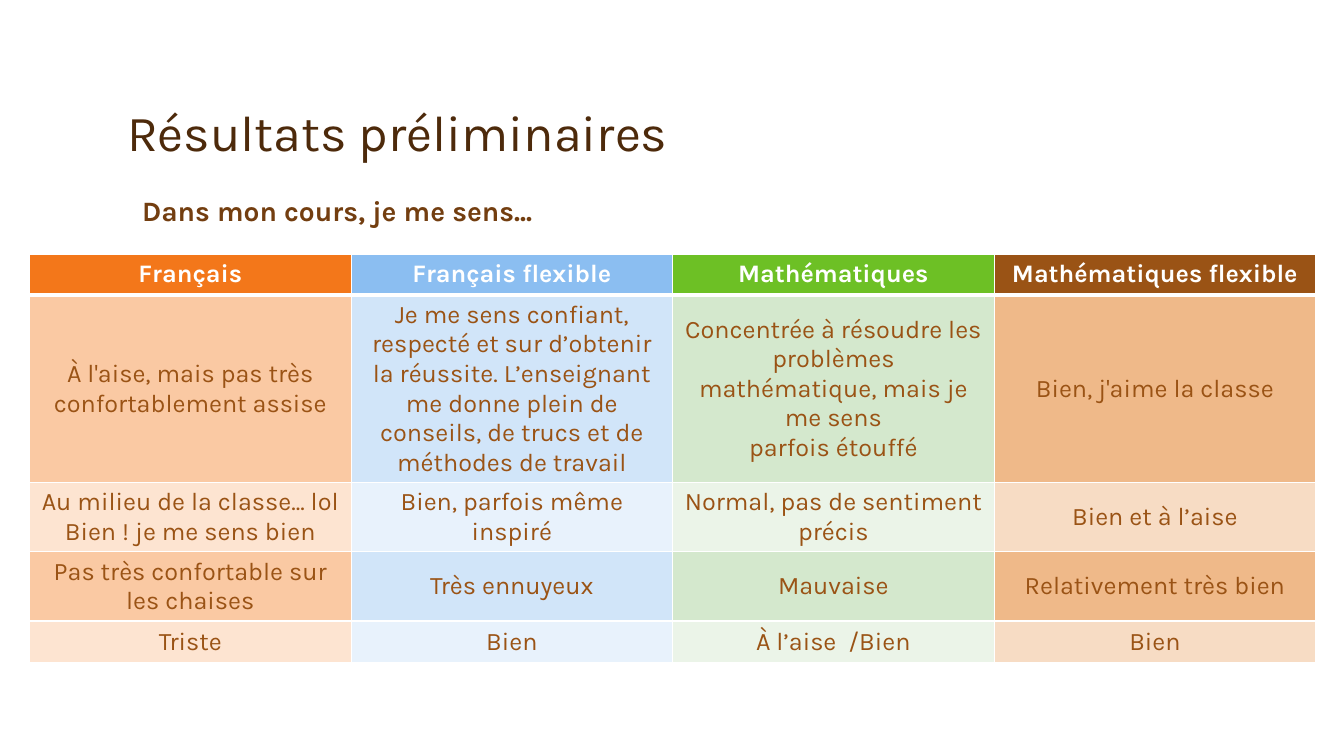
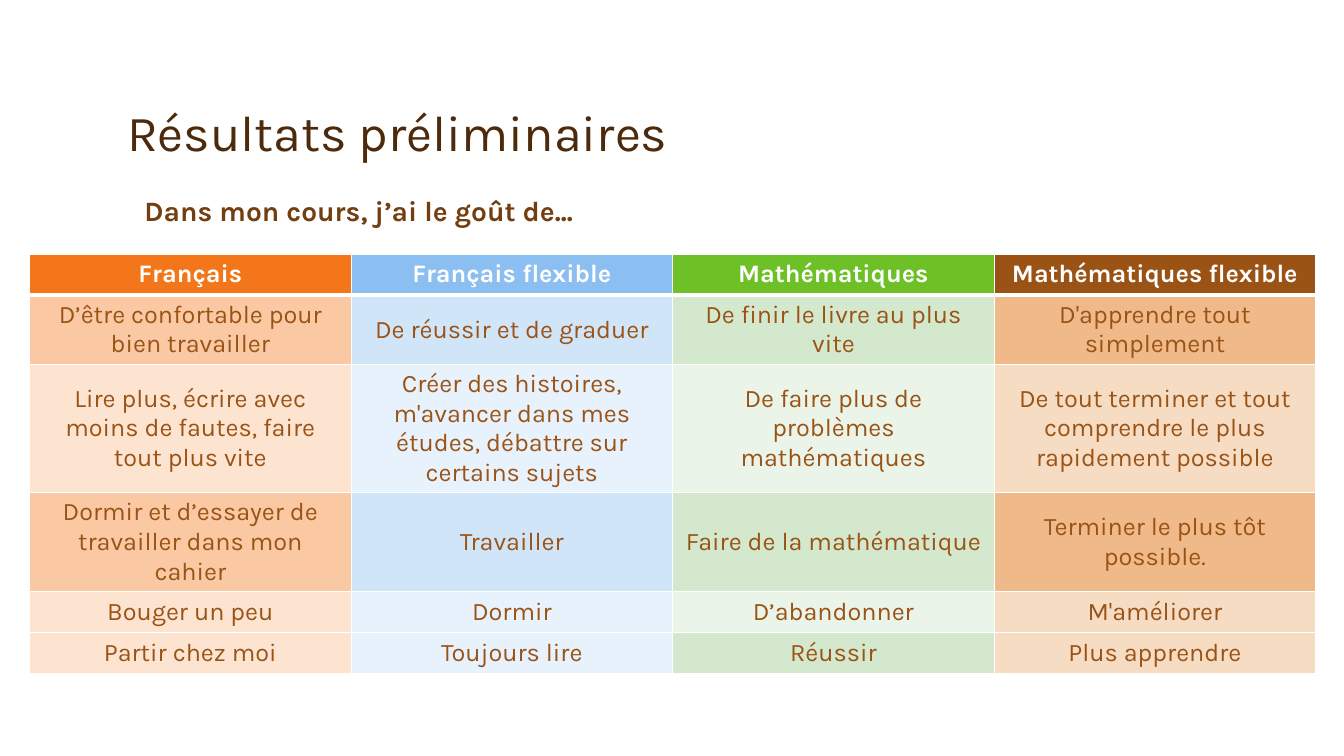
from pptx import Presentation
from pptx.dml.color import RGBColor
from pptx.enum.text import MSO_ANCHOR as Anchor, MSO_AUTO_SIZE as Fit, PP_ALIGN as Align
from pptx.oxml import parse_xml
from pptx.oxml.ns import nsdecls
from pptx.util import Inches, Pt

FONT = "Karla"
WHITE, TITLE, SUB, BODY = "FFFFFF", "4D2A0B", "733E10", "9A5315"
HEADS = ["Français", "Français flexible", "Mathématiques", "Mathématiques flexible"]
MAIN = ["F3771A", "8BBEF1", "6DC025", "9A5315"]
DARK = ["FAC9A3", "D1E5F9", "D4E8CD", "EFB989"]
PALE = ["FDE4D1", "E8F2FC", "EBF4E8", "F7DCC4"]
WIDE, HIGH = Inches(13.33), Inches(7.5)

FEEL = [
    ["À l'aise, mais pas très confortablement assise",
     "Je me sens confiant, respecté et sur d’obtenir la réussite. L’enseignant\n"
     "me donne plein de conseils, de trucs et de méthodes de travail",
     "Concentrée à résoudre les problèmes mathématique, mais je me sens\nparfois étouffé",
     "Bien, j'aime la classe"],
    ["Au milieu de la classe... lol\nBien ! je me sens bien", "Bien, parfois même inspiré",
     "Normal, pas de sentiment précis", "Bien et à l’aise"],
    ["Pas très confortable sur les chaises", "Très ennuyeux", "Mauvaise",
     "Relativement très bien"],
    ["Triste", "Bien", "À l’aise  /Bien", "Bien"],
]
WISH = [
    ["D’être confortable pour bien travailler", "De réussir et de graduer",
     "De finir le livre au plus vite", "D'apprendre tout simplement"],
    ["Lire plus, écrire avec moins de fautes, faire tout plus vite",
     "Créer des histoires, m'avancer dans mes études, débattre sur certains sujets",
     "De faire plus de problèmes mathématiques",
     "De tout terminer et tout comprendre le plus rapidement possible"],
    ["Dormir et d’essayer de travailler dans mon cahier", "Travailler",
     "Faire de la mathématique", "Terminer le plus tôt possible."],
    ["Bouger un peu", "Dormir", "D’abandonner", "M'améliorer"],
    ["Partir chez moi", "Toujours lire", "Réussir", "Plus apprendre"],
]


def tint(hue):
    return RGBColor.from_string(hue)


def area(left, top, width, height):
    return (int(WIDE * left / 100), int(HIGH * top / 100),
            int(WIDE * width / 100), int(HIGH * height / 100))


def write(frame, text, size, hue, bold=False, align=Align.CENTER):
    frame.text = text
    for par in frame.paragraphs:
        par.alignment = align
        for run in par.runs:
            font = run.font
            font.name, font.size, font.bold = FONT, Pt(size), bold
            font.color.rgb = tint(hue)


def add_title(slide, box, text):
    shape = slide.shapes.title
    shape.left, shape.top, shape.width, shape.height = box
    frame = shape.text_frame
    write(frame, text, 36, TITLE, align=Align.LEFT)
    frame.auto_size = Fit.NONE
    frame.vertical_anchor = Anchor.BOTTOM
    frame.paragraphs[0].line_spacing = 0.9


def add_sub(slide, box, text):
    frame = slide.shapes.add_textbox(*box).text_frame
    frame.word_wrap = False
    frame.auto_size = Fit.SHAPE_TO_FIT_TEXT
    write(frame, text, 20, SUB, True)


def edge(cell, row):
    rules = {"L": 1, "R": 1, "T": 3 if row == 1 else 1, "B": 3 if row == 0 else 1}
    props = cell._tc.get_or_add_tcPr()
    for side, width in rules.items():
        props.append(parse_xml(
            f'<a:ln{side} {nsdecls("a")} w="{Pt(width)}"><a:solidFill>'
            f'<a:srgbClr val="{WHITE}"/></a:solidFill></a:ln{side}>'))


def add_grid(slide, box, rows, light):
    left, top, width, high = box
    lines = [HEADS] + rows
    grid = slide.shapes.add_table(len(lines), len(HEADS), left, top, width,
                                  high * len(lines)).table
    for row, line in enumerate(lines):
        for col, text in enumerate(line):
            cell = grid.cell(row, col)
            head = row == 0
            dark = row % 2 and (row, col) not in light
            hues = MAIN if head else DARK if dark else PALE
            edge(cell, row)
            cell.fill.solid()
            cell.fill.fore_color.rgb = tint(hues[col])
            cell.vertical_anchor = Anchor.MIDDLE
            write(cell.text_frame, text, 18, WHITE if head else BODY, head)


def add_page(deck, ask, span, rows, light=()):
    slide = deck.slides.add_slide(deck.slide_layouts[5])
    add_title(slide, area(8.7, 4.4, 82.5, 17.8), "Résultats préliminaires")
    add_grid(slide, area(2.2, 33.6, 95.7, 5.43), rows, light)
    add_sub(slide, area(8.7, 24.93, span, 5.87), ask)


def main():
    deck = Presentation()
    deck.slide_width, deck.slide_height = WIDE, HIGH
    add_page(deck, "Dans mon cours, je me sens...", 32.8, FEEL)
    add_page(deck, "Dans mon cours, j’ai le goût de...", 36, WISH,
             {(5, 0), (5, 1), (5, 3)})
    deck.save("out.pptx")


if __name__ == "__main__":
    main()
